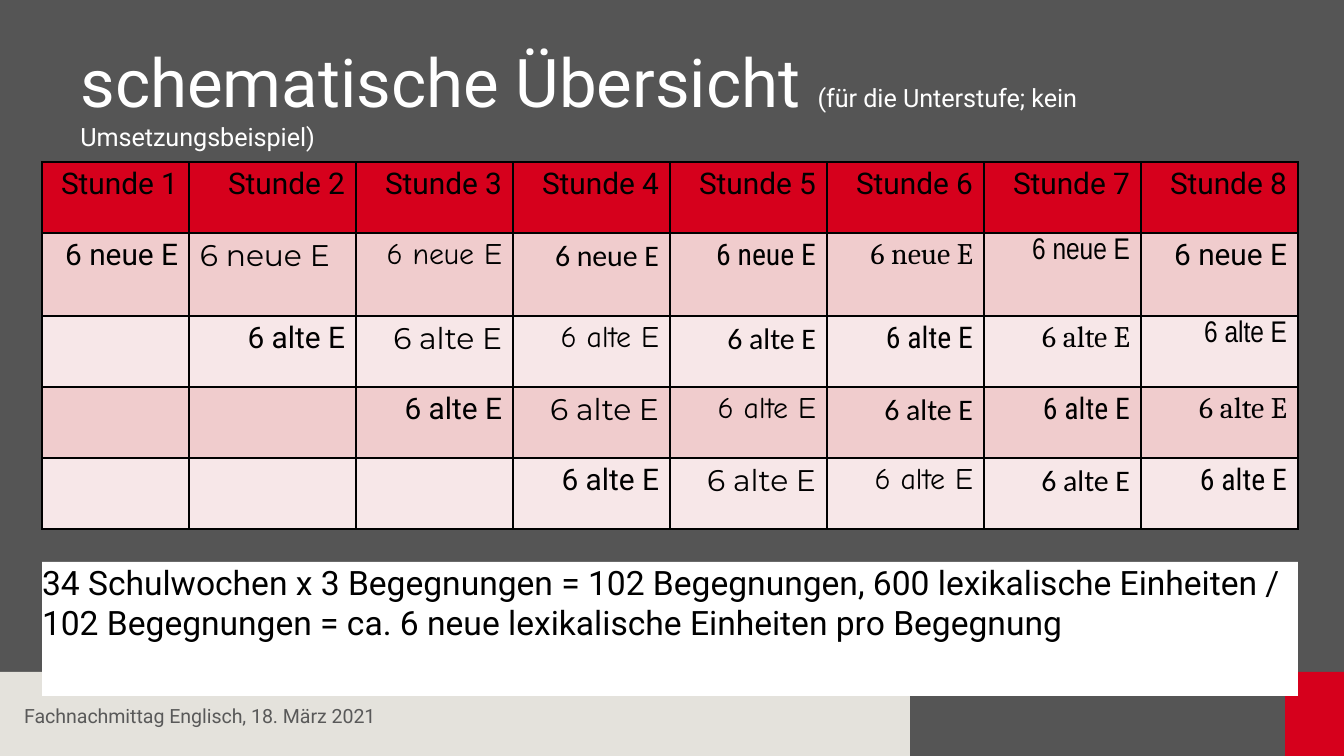
from pptx import Presentation
from pptx.dml.color import RGBColor
from pptx.enum.shapes import MSO_SHAPE as Shape
from pptx.enum.text import MSO_ANCHOR as Anchor, PP_ALIGN as Align
from pptx.oxml import parse_xml
from pptx.oxml.ns import nsdecls
from pptx.util import Emu, Pt

PX = 914400 / 134.4

DARK = RGBColor(0x55, 0x55, 0x55)
STONE = RGBColor(0xE4, 0xE2, 0xDC)
RED = RGBColor(0xD6, 0x00, 0x1C)
ROSE = RGBColor(0xF0, 0xCC, 0xCD)
PALE = RGBColor(0xF7, 0xE7, 0xE8)
GREY = RGBColor(0x59, 0x59, 0x59)
WHITE = RGBColor(0xFF, 0xFF, 0xFF)
BLACK = RGBColor(0x00, 0x00, 0x00)

# Each lesson's new units keep their font as they return in later lessons
FONTS = ["Roboto", "Montserrat", "Comic Neue", "Calibri",
         "Roboto Condensed", "Cambria", "Arial Narrow"]
COLUMNS = [147, 167] + [157] * 6
ROWS = [71, 83, 71, 71, 71]


def px(n):
    return Emu(round(n * PX))


def box(*lengths):
    return [px(n) for n in lengths]


def style(p, size, color, font="Roboto", align=Align.LEFT):
    p.alignment = align
    p.font.size = Pt(size)
    p.font.name = font
    p.font.color.rgb = color


def set_margins(item, x, y):
    item.margin_left = item.margin_right = px(x)
    item.margin_top = item.margin_bottom = px(y)


def add_rect(slide, x, y, w, h, color):
    sp = slide.shapes.add_shape(Shape.RECTANGLE, *box(x, y, w, h))
    sp.shadow.inherit = False
    sp.fill.solid()
    sp.fill.fore_color.rgb = color
    sp.line.fill.background()
    return sp


def add_title(slide, x, y, w, h):
    title = slide.shapes.title
    title.left, title.top, title.width, title.height = box(x, y, w, h)
    tf = title.text_frame
    tf.word_wrap = True
    tf.vertical_anchor = Anchor.MIDDLE
    p = tf.paragraphs[0]
    style(p, 36, WHITE)
    p.add_run().text = "schematische Übersicht "
    r = p.add_run()
    r.text = "(für die Unterstufe; kein Umsetzungsbeispiel)"
    r.font.size = Pt(13.5)


def add_footer(slide, x, y, w, h):
    # Colour bands
    left = x
    for width, color in ((910, STONE), (375, DARK), (w - 1285, RED)):
        add_rect(slide, left, y, width, h, color)
        left += width
    # Event and date
    tf = slide.shapes.add_textbox(*box(x + 11, y + 24, 664, 40)).text_frame
    tf.word_wrap = True
    tf.vertical_anchor = Anchor.MIDDLE
    p = tf.paragraphs[0]
    p.text = "Fachnachmittag Englisch, 18. März 2021"
    style(p, 10.5, GREY)


def add_borders(cell):
    tcPr = cell._tc.get_or_add_tcPr()
    for i, side in enumerate(("lnL", "lnR", "lnT", "lnB")):
        tcPr.insert(i, parse_xml(
            f'<a:{side} {nsdecls("a")} w="12700"><a:solidFill>'
            f'<a:srgbClr val="{BLACK}"/></a:solidFill></a:{side}>'))


def add_lesson_table(slide, x, y):
    frame = slide.shapes.add_table(len(ROWS), len(COLUMNS),
                                   *box(x, y, sum(COLUMNS), sum(ROWS)))
    table = frame.table
    for column, width in zip(table.columns, COLUMNS):
        column.width = px(width)
    for row, height in zip(table.rows, ROWS):
        row.height = px(height)

    for i in range(len(ROWS)):
        for j in range(len(COLUMNS)):
            cell = table.cell(i, j)
            set_margins(cell, 11, 5)
            cell.fill.solid()
            cell.fill.fore_color.rgb = RED if i == 0 else ROSE if i % 2 else PALE
            add_borders(cell)
            p = cell.text_frame.paragraphs[0]
            font, align = "Roboto", Align.RIGHT
            if i == 0:
                p.text = f"Stunde {j + 1}"
            elif j >= i - 1:
                p.text = "6 neue E" if i == 1 else "6 alte E"
                font = FONTS[(j - i + 1) % len(FONTS)]
            if (i, j) == (1, 1):
                align = Align.LEFT
            style(p, 16, BLACK, font, align)
            p.font.bold = False


def add_calculation(slide, x, y, w, h):
    tf = add_rect(slide, x, y, w, h, WHITE).text_frame
    tf.word_wrap = True
    tf.vertical_anchor = Anchor.TOP
    set_margins(tf, 0, 0)
    p = tf.paragraphs[0]
    p.text = ("34 Schulwochen x 3 Begegnungen = 102 Begegnungen, "
              "600 lexikalische Einheiten / 102 Begegnungen = "
              "ca. 6 neue lexikalische Einheiten pro Begegnung")
    style(p, 18, BLACK)


def main():
    prs = Presentation()
    prs.slide_width, prs.slide_height = box(1344, 756)
    slide = prs.slides.add_slide(prs.slide_layouts[5])
    slide.background.fill.solid()
    slide.background.fill.fore_color.rgb = DARK

    add_footer(slide, 0, 672, 1344, 84)
    add_title(slide, 67, 33, 1210, 126)
    add_lesson_table(slide, 42, 162)
    add_calculation(slide, 42, 562, 1256, 134)
    prs.save("out.pptx")


if __name__ == "__main__":
    main()
